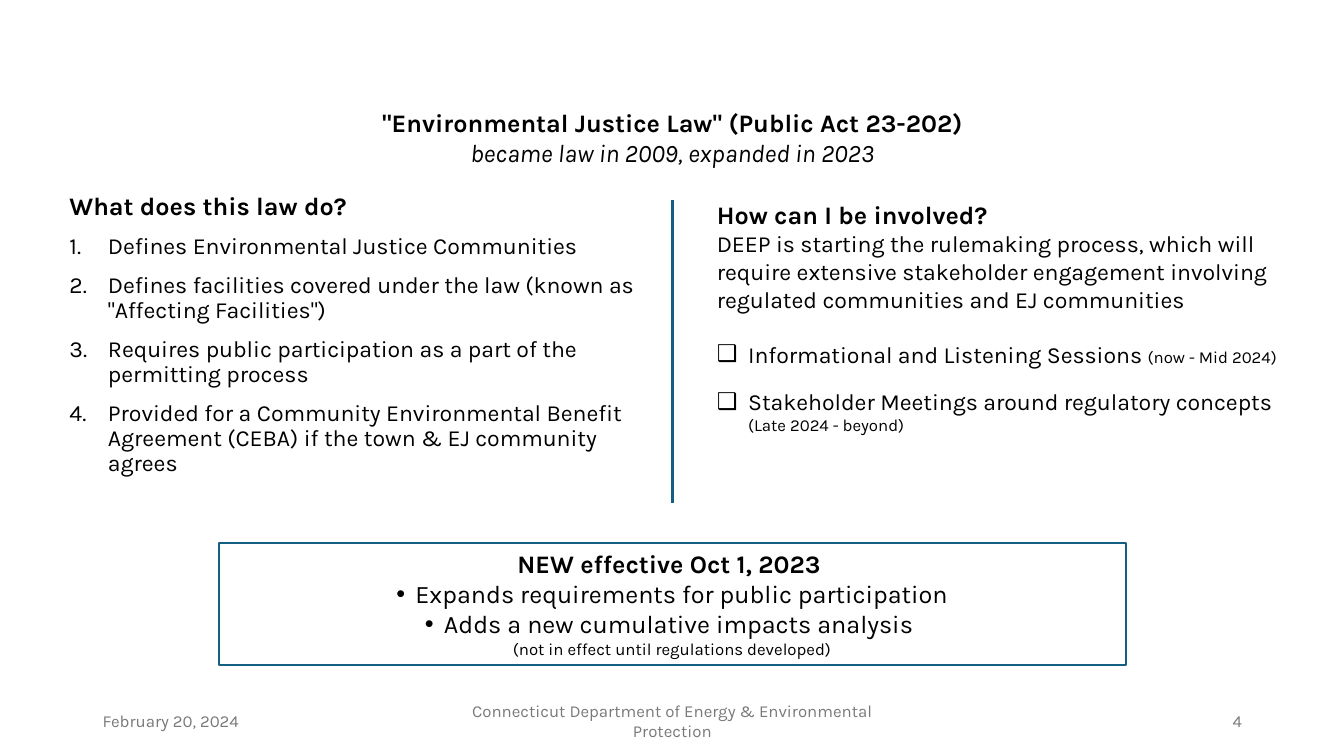
from dataclasses import dataclass

from lxml import etree
from pptx import Presentation
from pptx.dml.color import RGBColor
from pptx.enum.shapes import MSO_CONNECTOR, MSO_SHAPE
from pptx.enum.text import MSO_ANCHOR, MSO_AUTO_SIZE, PP_ALIGN
from pptx.oxml.ns import qn
from pptx.shapes.base import BaseShape
from pptx.text.text import TextFrame
from pptx.util import Cm, Pt

LEFT, CENTER, RIGHT = PP_ALIGN.LEFT, PP_ALIGN.CENTER, PP_ALIGN.RIGHT
TOP, MIDDLE = MSO_ANCHOR.TOP, MSO_ANCHOR.MIDDLE
NO_AUTOFIT = MSO_AUTO_SIZE.NONE
RECTANGLE = MSO_SHAPE.RECTANGLE
STRAIGHT = MSO_CONNECTOR.STRAIGHT

BLACK = RGBColor(0x00, 0x00, 0x00)
WHITE = RGBColor(0xFF, 0xFF, 0xFF)
BLUE = RGBColor(0x15, 0x60, 0x82)
GRAY = RGBColor(0x79, 0x79, 0x79)
FONT = "Karla"
HEADING, BODY, SMALL = 18, 16.5, 12
NUMBERED = "1."


@dataclass(frozen=True)
class Run:
    text: str
    size: float = BODY
    bold: bool = False
    italic: bool = False
    color: RGBColor = BLACK


@dataclass(frozen=True)
class Para:
    runs: tuple[Run, ...]
    align: PP_ALIGN = LEFT
    bullet: str = ""
    indent: float = 0
    before: float = 0
    spacing: float = 1.0


@dataclass(frozen=True)
class Footer:
    text: str
    left: float
    width: float
    align: PP_ALIGN


TITLE = (
    Para((Run('"Environmental Justice Law" (Public Act 23-202)', HEADING, bold=True),), CENTER),
    Para((Run("became law in 2009, expanded in 2023", HEADING, italic=True),), CENTER),
)

LAW_POINTS = (
    "Defines Environmental Justice Communities",
    'Defines facilities covered under the law (known as "Affecting Facilities")',
    "Requires public participation as a part of the permitting process",
    "Provided for a Community Environmental Benefit Agreement (CEBA) if the town & EJ community agrees",
)
LAW = (
    Para((Run("What does this law do?", HEADING, bold=True),), before=10, spacing=0.9),
    *(Para((Run(point),), bullet=NUMBERED, indent=0.97, before=10, spacing=0.9) for point in LAW_POINTS),
)

INVOLVEMENT = (
    Para((Run("How can I be involved?", HEADING, bold=True),)),
    Para((Run("DEEP is starting the rulemaking process, which will require extensive stakeholder "
              "engagement involving regulated communities and EJ communities"),)),
    Para((Run("Informational and Listening Sessions "), Run("(now - Mid 2024)", SMALL)),
         bullet="❑", indent=0.79, before=19.5),
    Para((Run("Stakeholder Meetings around regulatory concepts "), Run("(Late 2024 - beyond)", SMALL)),
         bullet="❑", indent=0.79, before=14),
)

CHANGES = (
    Para((Run("NEW effective Oct 1, 2023 ", HEADING, bold=True),), CENTER),
    Para((Run("Expands requirements for public participation", HEADING),), CENTER, "•", 0.48),
    Para((Run("Adds a new cumulative impacts analysis ", HEADING),), CENTER, "•", 0.48),
    Para((Run("(not in effect until regulations developed)", SMALL),), CENTER),
)

FOOTERS = (
    Footer("February 20, 2024", 2.34, 7.62, LEFT),
    Footer("Connecticut Department of Energy & Environmental Protection", 11.23, 11.43, CENTER),
    Footer("4", 23.93, 7.62, RIGHT),
)


def place(sp: BaseShape, left: float, top: float, width: float, height: float) -> None:
    sp.left, sp.top, sp.width, sp.height = Cm(left), Cm(top), Cm(width), Cm(height)


def write(tf: TextFrame, paras: tuple[Para, ...], anchor: MSO_ANCHOR = TOP) -> None:
    tf.word_wrap = True
    tf.auto_size = NO_AUTOFIT
    tf.vertical_anchor = anchor
    for i, para in enumerate(paras):
        p = tf.paragraphs[0] if i == 0 else tf.add_paragraph()
        p.alignment = para.align
        p.line_spacing = para.spacing
        p.space_before = Pt(para.before)
        set_bullet(p._p.get_or_add_pPr(), para)
        for run in para.runs:
            r = p.add_run()
            r.text = run.text
            r.font.name = FONT
            r.font.size = Pt(run.size)
            r.font.bold = run.bold
            r.font.italic = run.italic
            r.font.color.rgb = run.color


def set_bullet(pPr: etree.ElementBase, para: Para) -> None:
    pPr.set("marL", str(Cm(para.indent)))
    pPr.set("indent", str(-Cm(para.indent)))
    if not para.bullet:
        etree.SubElement(pPr, qn("a:buNone"))
    elif para.bullet == NUMBERED:
        etree.SubElement(pPr, qn("a:buFont"), typeface="+mj-lt")
        etree.SubElement(pPr, qn("a:buAutoNum"), type="arabicPeriod")
    else:
        etree.SubElement(pPr, qn("a:buFont"), typeface="Arial")
        etree.SubElement(pPr, qn("a:buChar"), char=para.bullet)


def main() -> None:
    prs = Presentation()
    prs.slide_width, prs.slide_height = Cm(33.87), Cm(19.05)
    s = prs.slides.add_slide(prs.slide_layouts[3])
    title, law, involvement = s.placeholders

    place(title, 7.85, 2.57, 18.19, 1.8)
    write(title.text_frame, TITLE)

    place(law, 1.75, 4.88, 14.76, 8.74)
    tf = law.text_frame
    tf.margin_left = tf.margin_top = tf.margin_right = tf.margin_bottom = 0
    write(tf, LAW)

    place(involvement, 17.81, 4.9, 14.76, 6.27)
    write(involvement.text_frame, INVOLVEMENT)

    box = s.shapes.add_shape(RECTANGLE, Cm(5.51), Cm(13.69), Cm(22.86), Cm(3.07))
    box.shadow.inherit = False
    box.fill.solid()
    box.fill.fore_color.rgb = WHITE
    box.line.color.rgb = BLUE
    box.line.width = Pt(1.5)
    write(box.text_frame, CHANGES)

    divider = s.shapes.add_connector(STRAIGHT, Cm(16.94), Cm(5.05), Cm(16.94), Cm(12.67))
    divider.line.color.rgb = BLUE
    divider.line.width = Pt(2.25)
    etree.SubElement(divider._element.spPr, qn("a:effectLst"))

    for footer in FOOTERS:
        sp = s.shapes.add_textbox(Cm(footer.left), Cm(17.65), Cm(footer.width), Cm(1.02))
        write(sp.text_frame, (Para((Run(footer.text, SMALL, color=GRAY),), footer.align),), MIDDLE)

    prs.save("out.pptx")


if __name__ == "__main__":
    main()
